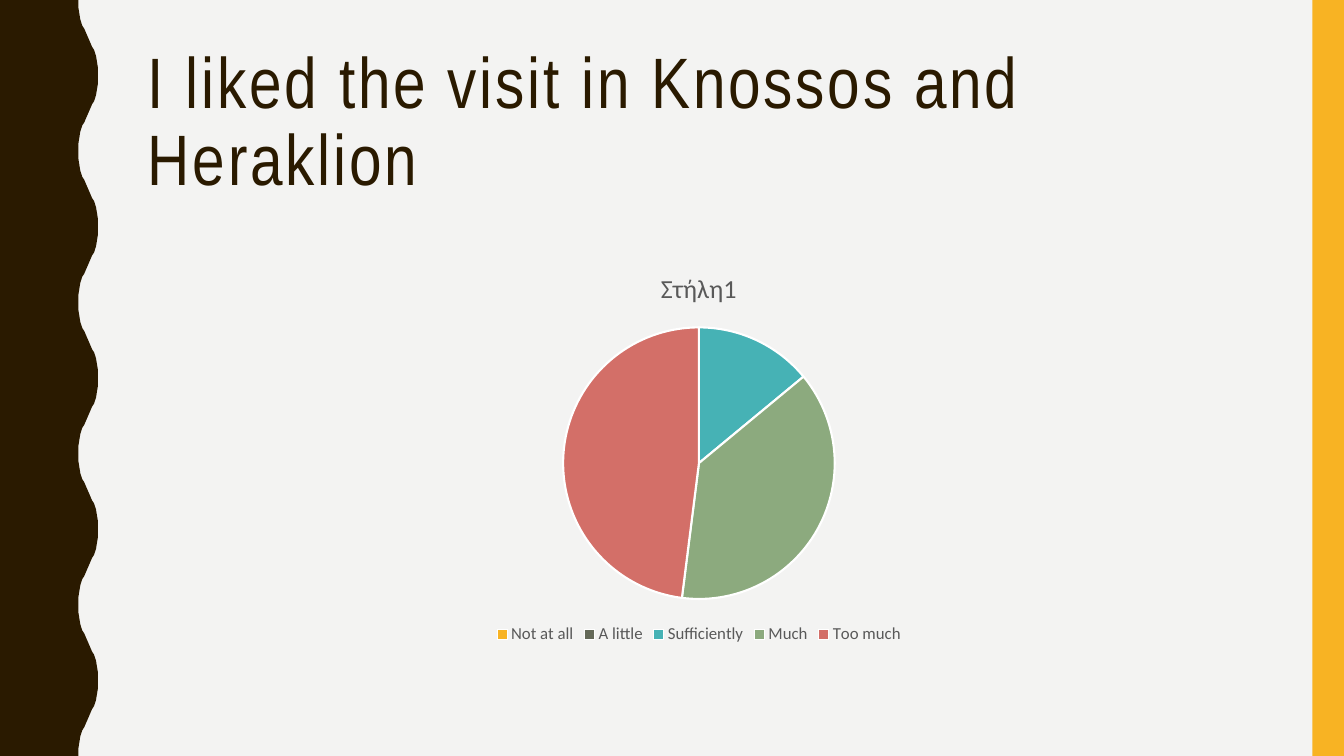
from pptx import Presentation
from pptx.chart.data import CategoryChartData
from pptx.dml.color import RGBColor
from pptx.enum.chart import XL_CHART_TYPE, XL_LEGEND_POSITION
from pptx.enum.shapes import MSO_SHAPE
from pptx.enum.text import MSO_ANCHOR
from pptx.util import Pt

PIE = XL_CHART_TYPE.PIE
BOTTOM = XL_LEGEND_POSITION.BOTTOM
RECTANGLE = MSO_SHAPE.RECTANGLE
MIDDLE = MSO_ANCHOR.MIDDLE

PAPER = RGBColor(0xF3, 0xF3, 0xF2)
BROWN = RGBColor(0x2A, 0x1A, 0x00)
AMBER = RGBColor(0xF8, 0xB3, 0x23)
GREY = RGBColor(0x59, 0x59, 0x59)
WHITE = RGBColor(0xFF, 0xFF, 0xFF)
ANSWERS = [
    ("Not at all", 0, AMBER),
    ("A little", 0, RGBColor(0x65, 0x6A, 0x59)),
    ("Sufficiently", 14, RGBColor(0x46, 0xB2, 0xB5)),
    ("Much", 38, RGBColor(0x8C, 0xAA, 0x7E)),
    ("Too much", 48, RGBColor(0xD3, 0x6F, 0x68)),
]

PAGE_WIDTH, PAGE_HEIGHT = 960, 540
WAVE_COUNT = 5
# Half a wave, from trough to crest: shares of the band's width and of the wave's height
HALF_WAVE = [
    (0.8, 0), (0.8, 0.05), (0.81, 0.09), (0.82, 0.13), (0.84, 0.17),
    (0.86, 0.19), (0.88, 0.22), (0.9, 0.25), (0.92, 0.28), (0.94, 0.31),
    (0.96, 0.33), (0.98, 0.37), (0.99, 0.41), (1, 0.45), (1, 0.5),
]


def paint(shape, color):
    shape.fill.solid()
    shape.fill.fore_color.rgb = color
    shape.line.fill.background()
    shape.shadow.inherit = False


def add_wavy_band(page, left, top, width, height):
    wave = HALF_WAVE + [(x, 1 - y) for x, y in reversed(HALF_WAVE[:-1])]
    wave_height = height / WAVE_COUNT
    edge = [
        (Pt(left + x * width), Pt(top + (number + y) * wave_height))
        for number in range(WAVE_COUNT)
        for x, y in wave
    ]
    outline = page.shapes.build_freeform(Pt(left), Pt(top))
    outline.add_line_segments(edge + [(Pt(left), Pt(top + height))], close=True)
    paint(outline.convert_to_shape(), BROWN)


def add_side_bar(page, left, top, width, height):
    bar = page.shapes.add_shape(RECTANGLE, Pt(left), Pt(top), Pt(width), Pt(height))
    paint(bar, AMBER)


def add_title(page, text, left, top, width, height):
    box = page.shapes.add_textbox(Pt(left), Pt(top), Pt(width), Pt(height))
    frame = box.text_frame
    frame.word_wrap = True
    frame.vertical_anchor = MIDDLE
    para = frame.paragraphs[0]
    para.line_spacing = 0.9
    span = para.add_run()
    span.text = text
    span.font.name = "Arial Narrow"
    span.font.size = Pt(51)
    span.font.color.rgb = BROWN
    span.font._element.set("spc", "200")


def set_chart_font(font, size):
    font.name = "Calibri"
    font.size = Pt(size)
    font.bold = False
    font.color.rgb = GREY


def add_answer_pie(page, name, left, top, width, height):
    data = CategoryChartData()
    data.categories = [answer for answer, _, _ in ANSWERS]
    data.add_series(name, [value for _, value, _ in ANSWERS])
    chart = page.shapes.add_chart(
        PIE, Pt(left), Pt(top), Pt(width), Pt(height), data
    ).chart
    set_chart_font(chart.font, 10)

    chart.has_title = True
    heading = chart.chart_title
    heading.include_in_layout = False
    heading.text_frame.text = name
    set_chart_font(heading.text_frame.paragraphs[0].font, 18.6)

    chart.has_legend = True
    chart.legend.position = BOTTOM
    chart.legend.include_in_layout = False
    set_chart_font(chart.legend.font, 12)

    plot = chart.plots[0]
    plot.vary_by_categories = True
    for index, (_, _, color) in enumerate(ANSWERS):
        slice_format = plot.series[0].points[index].format
        slice_format.fill.solid()
        slice_format.fill.fore_color.rgb = color
        slice_format.line.color.rgb = WHITE
        slice_format.line.width = Pt(1.5)


def main():
    deck = Presentation()
    deck.slide_width, deck.slide_height = Pt(PAGE_WIDTH), Pt(PAGE_HEIGHT)
    page = deck.slides.add_slide(deck.slide_layouts[6])
    page.background.fill.solid()
    page.background.fill.fore_color.rgb = PAPER

    add_wavy_band(page, 0, 0, 70, PAGE_HEIGHT)
    add_side_bar(page, PAGE_WIDTH - 22.5, 0, 22.5, PAGE_HEIGHT)
    add_title(page, "I liked the visit in Knossos and Heraklion", 98.5, 30, 801.5, 117.5)
    add_answer_pie(page, "Στήλη1", 98.5, 180, 801.5, 283)
    deck.save("out.pptx")


if __name__ == "__main__":
    main()
